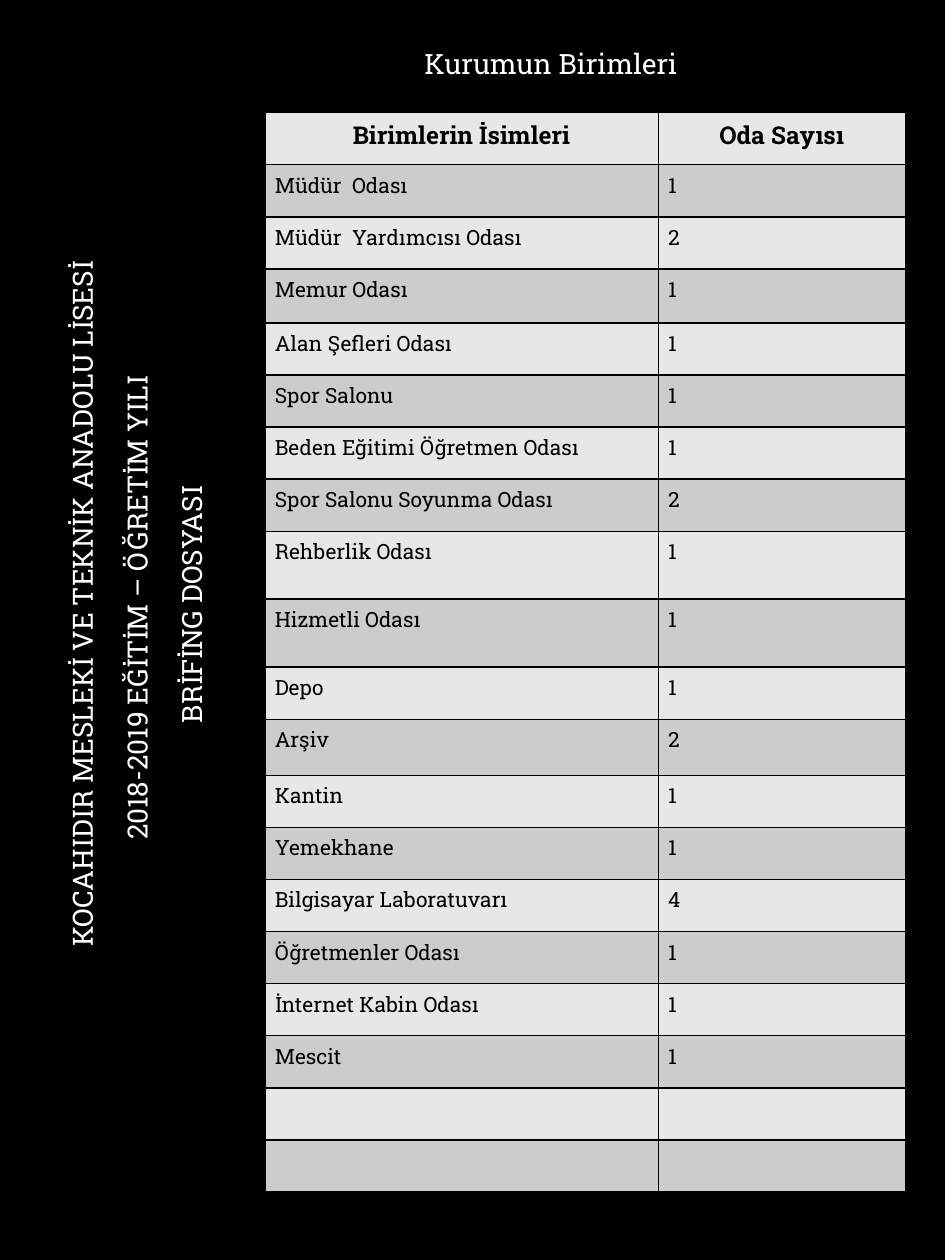
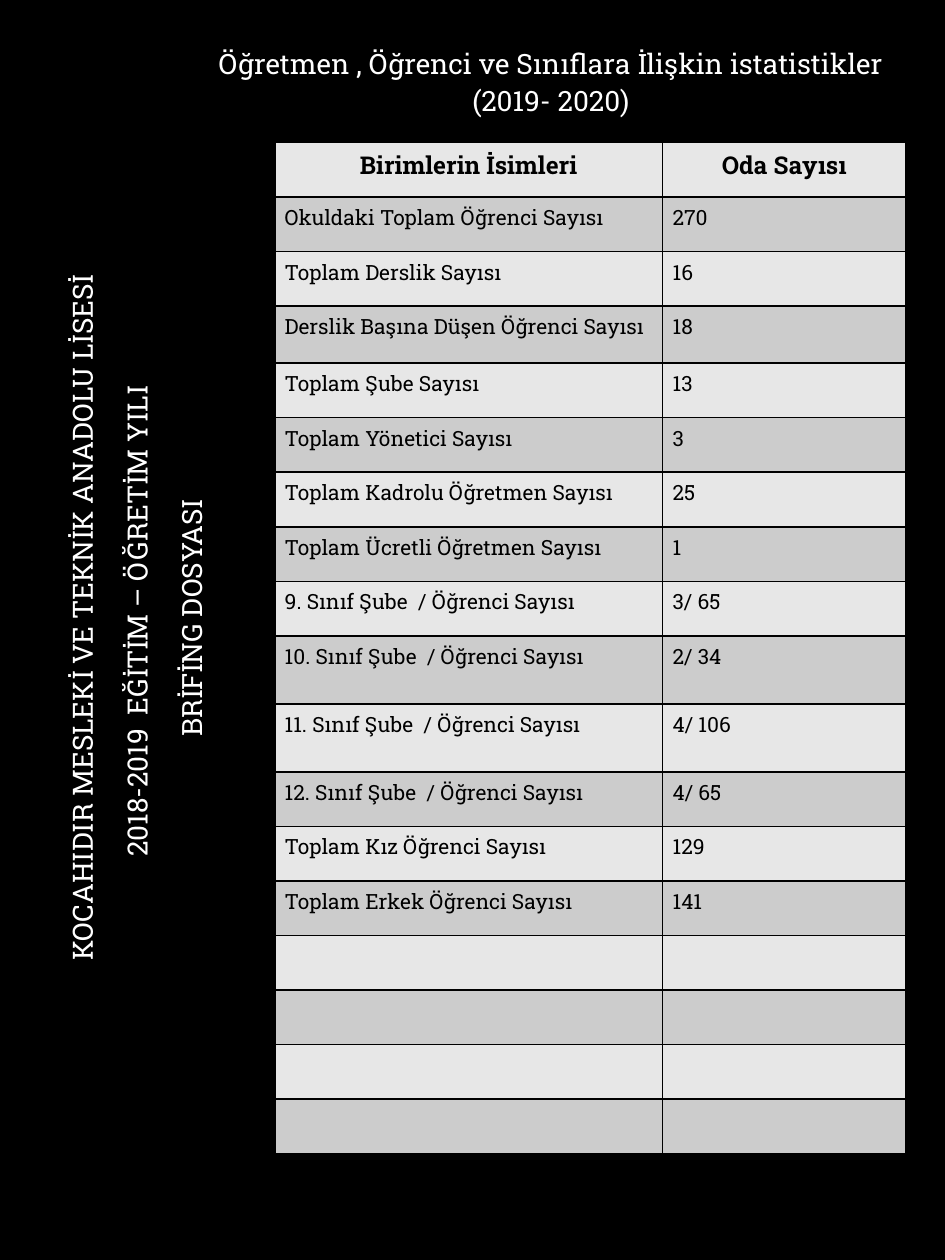
from dataclasses import dataclass, field

from lxml.etree import SubElement
from pptx import Presentation
from pptx.dml.color import RGBColor as Rgb
from pptx.enum.text import MSO_ANCHOR as Anchor, PP_ALIGN as Align
from pptx.oxml.ns import qn
from pptx.util import Cm, Pt


@dataclass(frozen=True)
class Theme:
    font: str = "Roboto Slab"
    black: Rgb = Rgb(0x00, 0x00, 0x00)
    white: Rgb = Rgb(0xFF, 0xFF, 0xFF)
    bands: tuple = (Rgb(0xE7, 0xE7, 0xE7), Rgb(0xCC, 0xCC, 0xCC))
    title_size: int = 16
    header_size: int = 14
    cell_size: int = 12
    border: int = 1


@dataclass(frozen=True)
class Grid:
    """A two-column table; lengths in cm, tall_rows maps row index to height."""
    left: float
    top: float
    columns: tuple[float, float]
    row_height: float
    rows: list[tuple[str, str]]
    blank_rows: int
    tall_rows: dict[int, float] = field(default_factory=dict)


@dataclass(frozen=True)
class Sidebar:
    """Text turned upwards; middle and length in cm."""
    middle: float
    length: float
    year: str


@dataclass(frozen=True)
class Page:
    title: str
    grid: Grid
    sidebar: Sidebar


THEME = Theme()
HEADER = ("Birimlerin İsimleri", "Oda Sayısı")
SCHOOL = "KOCAHIDIR MESLEKİ VE TEKNİK ANADOLU LİSESİ"
DOCUMENT = "BRİFİNG DOSYASI"
SIDEBAR_CENTRE, SIDEBAR_DEPTH = 3.05, 3.73

PAGES = [
    Page(
        "Kurumun Birimleri",
        Grid(5.34, 2.27, (7.93, 4.98), 1.05, [
            ("Müdür  Odası", "1"),
            ("Müdür  Yardımcısı Odası", "2"),
            ("Memur Odası", "1"),
            ("Alan Şefleri Odası", "1"),
            ("Spor Salonu", "1"),
            ("Beden Eğitimi Öğretmen Odası", "1"),
            ("Spor Salonu Soyunma Odası", "2"),
            ("Rehberlik Odası", "1"),
            ("Hizmetli Odası", "1"),
            ("Depo", "1"),
            ("Arşiv", "2"),
            ("Kantin", "1"),
            ("Yemekhane", "1"),
            ("Bilgisayar Laboratuvarı", "4"),
            ("Öğretmenler Odası", "1"),
            ("İnternet Kabin Odası", "1"),
            ("Mescit", "1"),
        ], 2, {3: 1.09, 8: 1.37, 9: 1.37, 11: 1.13}),
        Sidebar(12.18, 20.98, "2018-2019 EĞİTİM – ÖĞRETİM YILI "),
    ),
    Page(
        "Öğretmen , Öğrenci ve Sınıflara İlişkin istatistikler (2019- 2020)",
        Grid(5.54, 2.87, (7.82, 4.9), 1.1, [
            ("Okuldaki Toplam Öğrenci Sayısı", "270"),
            ("Toplam Derslik Sayısı", "16"),
            ("Derslik Başına Düşen Öğrenci Sayısı", "18"),
            ("Toplam Şube Sayısı", "13"),
            ("Toplam Yönetici Sayısı", "3"),
            ("Toplam Kadrolu Öğretmen Sayısı", "25"),
            ("Toplam Ücretli Öğretmen Sayısı", "1"),
            ("9. Sınıf Şube  / Öğrenci Sayısı", "3/ 65"),
            ("10. Sınıf Şube  / Öğrenci Sayısı", "2/ 34"),
            ("11. Sınıf Şube  / Öğrenci Sayısı", "4/ 106"),
            ("12. Sınıf Şube  / Öğrenci Sayısı", "4/ 65"),
            ("Toplam Kız Öğrenci Sayısı", "129"),
            ("Toplam Erkek Öğrenci Sayısı", "141"),
        ], 4, {3: 1.15, 9: 1.37, 10: 1.37}),
        Sidebar(12.45, 20.42, "2018-2019  EĞİTİM – ÖĞRETİM YILI "),
    ),
]


def style_runs(p, size: int, color: Rgb, bold: bool = False) -> None:
    for r in p.runs:
        r.font.name = THEME.font
        r.font.size = Pt(size)
        r.font.bold = bold
        r.font.color.rgb = color


def add_borders(cell) -> None:
    tc_pr = cell._tc.get_or_add_tcPr()
    for position, side in enumerate(("a:lnL", "a:lnR", "a:lnT", "a:lnB")):
        line = SubElement(tc_pr, qn(side), w=str(Pt(THEME.border)))
        fill = SubElement(line, qn("a:solidFill"))
        SubElement(fill, qn("a:srgbClr"), val=str(THEME.black))
        tc_pr.insert(position, line)  # borders come before the fill


def fill_cell(cell, text: str, row: int) -> None:
    cell.fill.solid()
    cell.fill.fore_color.rgb = THEME.bands[row % 2]
    add_borders(cell)
    cell.margin_left = cell.margin_right = Cm(0.2)
    cell.margin_top = cell.margin_bottom = Cm(0.13)
    cell.vertical_anchor = Anchor.TOP
    if not text:
        return
    is_header = row == 0
    cell.text_frame.text = text
    p = cell.text_frame.paragraphs[0]
    p.alignment = Align.CENTER if is_header else Align.LEFT
    size = THEME.header_size if is_header else THEME.cell_size
    style_runs(p, size, THEME.black, is_header)


def add_grid(s, grid: Grid) -> None:
    rows = [HEADER, *grid.rows, *[("", "")] * grid.blank_rows]
    heights = [grid.tall_rows.get(i, grid.row_height) for i in range(len(rows))]
    table = s.shapes.add_table(
        len(rows), len(grid.columns), Cm(grid.left), Cm(grid.top),
        Cm(sum(grid.columns)), Cm(sum(heights))).table
    table.horz_banding = False
    for column, width in zip(table.columns, grid.columns):
        column.width = Cm(width)
    for i, (texts, height) in enumerate(zip(rows, heights)):
        table.rows[i].height = Cm(height)
        for j, text in enumerate(texts):
            fill_cell(table.cell(i, j), text, i)


def add_title(s, title: str) -> None:
    tf = s.shapes.add_textbox(Cm(3.94), Cm(0.74), Cm(14.33), Cm(0.97)).text_frame
    tf.word_wrap = True
    tf.text = title
    p = tf.paragraphs[0]
    p.alignment = Align.CENTER
    p.line_spacing = 1.1
    p.space_before = Pt(7.5)
    style_runs(p, THEME.title_size, THEME.white)


def add_sidebar(s, sidebar: Sidebar) -> None:
    sp = s.shapes.add_textbox(
        Cm(SIDEBAR_CENTRE - sidebar.length / 2),
        Cm(sidebar.middle - SIDEBAR_DEPTH / 2),
        Cm(sidebar.length), Cm(SIDEBAR_DEPTH))
    sp.rotation = 270
    tf = sp.text_frame
    tf.word_wrap = True
    tf.text = "\n".join((SCHOOL, sidebar.year, DOCUMENT))
    for p in tf.paragraphs:
        p.alignment = Align.CENTER
        p.space_before = Pt(2)
        p.space_after = Pt(10)
        style_runs(p, THEME.title_size, THEME.white)


def add_page(prs, page: Page) -> None:
    s = prs.slides.add_slide(prs.slide_layouts[6])
    s.background.fill.solid()
    s.background.fill.fore_color.rgb = THEME.black
    add_grid(s, page.grid)
    add_title(s, page.title)
    add_sidebar(s, page.sidebar)


def main() -> None:
    prs = Presentation()
    prs.slide_width, prs.slide_height = Cm(19.05), Cm(25.4)
    for page in PAGES:
        add_page(prs, page)
    prs.save("out.pptx")


if __name__ == "__main__":
    main()
